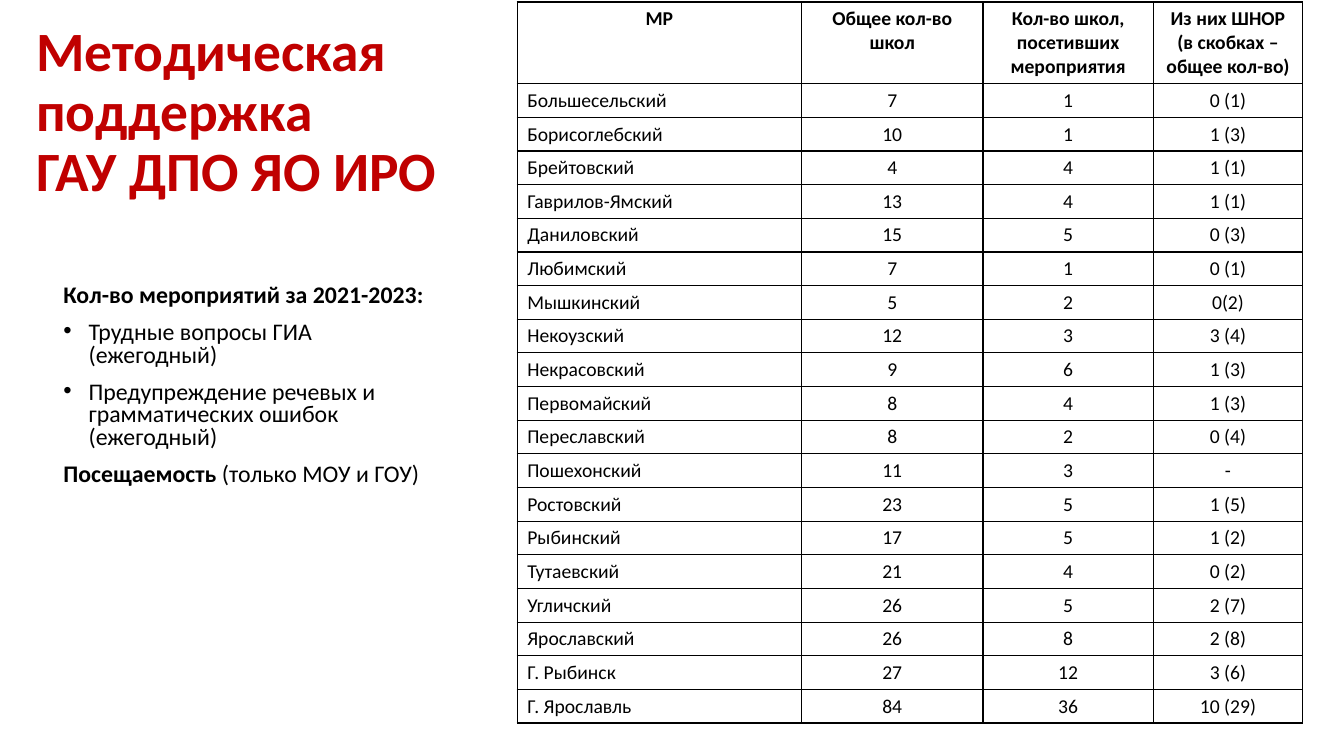
from lxml.etree import SubElement
from pptx import Presentation
from pptx.dml.color import RGBColor
from pptx.enum.text import MSO_ANCHOR, PP_ALIGN
from pptx.oxml.ns import qn
from pptx.util import Inches, Pt

FONT = "Calibri"
BLACK = "000000"
RED = "C00000"

TITLE = "Методическая поддержка\vГАУ ДПО ЯО ИРО"
EVENTS = [
    (False, [("Кол-во мероприятий за 2021-2023:", True)]),
    (True, [("Трудные вопросы ГИА (ежегодный)", False)]),
    (True, [("Предупреждение речевых и грамматических ошибок (ежегодный)", False)]),
    (False, [("Посещаемость", True), (" (только МОУ и ГОУ)", False)]),
]
HEADERS = [
    "МР",
    "Общее кол-во школ",
    "Кол-во школ, посетивших мероприятия",
    "Из них ШНОР (в скобках – общее кол-во)",
]
DISTRICTS = [
    ("Большесельский", "7", "1", "0 (1)"),
    ("Борисоглебский", "10", "1", "1 (3)"),
    ("Брейтовский", "4", "4", "1 (1)"),
    ("Гаврилов-Ямский", "13", "4", "1 (1)"),
    ("Даниловский", "15", "5", "0 (3)"),
    ("Любимский", "7", "1", "0 (1)"),
    ("Мышкинский", "5", "2", "0(2)"),
    ("Некоузский", "12", "3", "3 (4)"),
    ("Некрасовский", "9", "6", "1 (3)"),
    ("Первомайский", "8", "4", "1 (3)"),
    ("Переславский", "8", "2", "0 (4)"),
    ("Пошехонский", "11", "3", "-"),
    ("Ростовский", "23", "5", "1 (5)"),
    ("Рыбинский", "17", "5", "1 (2)"),
    ("Тутаевский", "21", "4", "0 (2)"),
    ("Угличский", "26", "5", "2 (7)"),
    ("Ярославский", "26", "8", "2 (8)"),
    ("Г. Рыбинск", "27", "12", "3 (6)"),
    ("Г. Ярославль", "84", "36", "10 (29)"),
]
COLUMN_WIDTHS = [2.82, 1.8, 1.69, 1.48]
HEADER_HEIGHT = 0.81
ROW_HEIGHT = 0.33


def color(value):
    return RGBColor.from_string(value)


def style_run(run, size, bold, run_color=BLACK):
    run.font.name = FONT
    run.font.size = Pt(size)
    run.font.bold = bold
    run.font.color.rgb = color(run_color)


def add_text_frame(slide, left, top, width, height):
    shape = slide.shapes.add_textbox(
        Inches(left), Inches(top), Inches(width), Inches(height)
    )
    shape.text_frame.word_wrap = True
    return shape.text_frame


def add_title(slide):
    text_frame = add_text_frame(slide, 0.26, 0.4, 4.87, 1.45)
    text_frame.vertical_anchor = MSO_ANCHOR.MIDDLE
    text_frame.text = TITLE
    paragraph = text_frame.paragraphs[0]
    paragraph.line_spacing = 0.9
    for run in paragraph.runs:
        style_run(run, 39.6, True, RED)


def add_bullet(paragraph):
    properties = paragraph._p.get_or_add_pPr()
    properties.set("marL", str(Inches(0.25)))
    properties.set("indent", str(Inches(-0.25)))
    SubElement(properties, qn("a:buFont"), typeface="Arial")
    SubElement(properties, qn("a:buChar"), char="•")


def add_events(slide):
    text_frame = add_text_frame(slide, 0.53, 2.78, 3.95, 2.46)
    for index, (bulleted, parts) in enumerate(EVENTS):
        paragraph = text_frame.add_paragraph() if index else text_frame.paragraphs[0]
        paragraph.line_spacing = 0.8
        paragraph.space_before = Pt(10)
        if bulleted:
            add_bullet(paragraph)
        for text, bold in parts:
            run = paragraph.add_run()
            run.text = text
            style_run(run, 17, bold)


def add_borders(cell):
    properties = cell._tc.get_or_add_tcPr()
    for side in ("a:lnL", "a:lnR", "a:lnT", "a:lnB"):
        line = SubElement(properties, qn(side), w=str(Pt(1)))
        fill = SubElement(line, qn("a:solidFill"))
        SubElement(fill, qn("a:srgbClr"), val=BLACK)


def fill_cell(cell, text, header, centered, anchor):
    add_borders(cell)
    cell.fill.background()
    cell.vertical_anchor = anchor
    cell.text_frame.text = text
    paragraph = cell.text_frame.paragraphs[0]
    paragraph.alignment = PP_ALIGN.CENTER if centered else PP_ALIGN.LEFT
    style_run(paragraph.runs[0], 14, header)


def add_district_table(slide):
    rows = [HEADERS, *DISTRICTS]
    height = HEADER_HEIGHT + ROW_HEIGHT * len(DISTRICTS)
    table = slide.shapes.add_table(
        len(rows), len(HEADERS),
        Inches(5.13), Inches(0.02), Inches(sum(COLUMN_WIDTHS)), Inches(height),
    ).table
    table.horz_banding = False
    table.first_row = False
    for column, width in zip(table.columns, COLUMN_WIDTHS):
        column.width = Inches(width)
    for row_index, values in enumerate(rows):
        header = row_index == 0
        table.rows[row_index].height = Inches(HEADER_HEIGHT if header else ROW_HEIGHT)
        for column_index, text in enumerate(values):
            middle = not header and column_index in (1, 2)
            anchor = MSO_ANCHOR.MIDDLE if middle else MSO_ANCHOR.TOP
            cell = table.cell(row_index, column_index)
            fill_cell(cell, text, header, header or column_index > 0, anchor)


def main():
    presentation = Presentation()
    presentation.slide_width = Inches(13.33)
    presentation.slide_height = Inches(7.5)
    slide = presentation.slides.add_slide(presentation.slide_layouts[6])
    add_title(slide)
    add_events(slide)
    add_district_table(slide)
    presentation.save("out.pptx")


if __name__ == "__main__":
    main()
